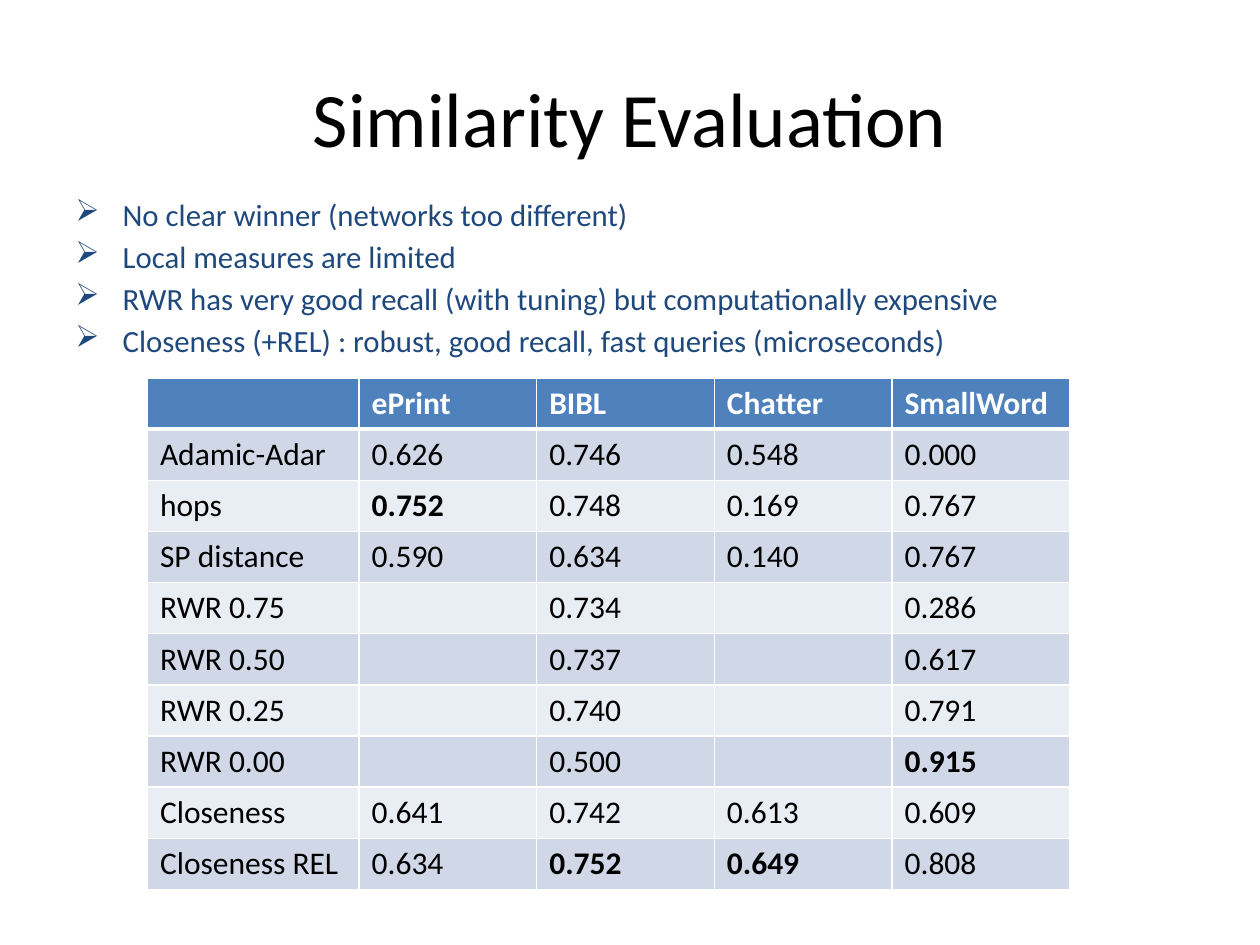
from dataclasses import dataclass

from lxml import etree
from pptx import Presentation
from pptx import util as u
from pptx.dml.color import RGBColor
from pptx.enum import text
from pptx.oxml.ns import qn


@dataclass(frozen=True)
class Theme:
    font: str = "Calibri"
    black: str = "000000"
    white: str = "FFFFFF"
    navy: str = "1F497D"
    header: str = "4F81BD"
    bands: tuple = ("D0D8E8", "E9EDF4")
    title_size: float = 44
    bullet_size: float = 17.6
    table_size: float = 18
    bullet: str = "➢"


class SlideBuilder:
    def __init__(self, slide, theme):
        self.slide = slide
        self.theme = theme

    def style(self, paragraph, size, color, bold=False):
        for run in paragraph.runs:
            font = run.font
            font.name = self.theme.font
            font.size = u.Pt(size)
            font.bold = bold
            font.color.rgb = RGBColor.from_string(color)

    def text_box(self, left, top, width, height, content, size, color):
        shape = self.slide.shapes.add_textbox(
            u.Inches(left), u.Inches(top), u.Inches(width), u.Inches(height))
        frame = shape.text_frame
        frame.word_wrap = True
        frame.text = content
        for paragraph in frame.paragraphs:
            self.style(paragraph, size, color)
        return frame

    def title(self, left, top, width, height, content):
        frame = self.text_box(left, top, width, height, content,
                              self.theme.title_size, self.theme.black)
        frame.vertical_anchor = text.MSO_ANCHOR.MIDDLE
        frame.paragraphs[0].alignment = text.PP_ALIGN.CENTER

    def bullets(self, left, top, width, height, items):
        frame = self.text_box(left, top, width, height, "\n".join(items),
                              self.theme.bullet_size, self.theme.navy)
        indent = u.Inches(0.375)
        for paragraph in frame.paragraphs:
            paragraph.space_before = u.Pt(3)
            properties = paragraph._p.get_or_add_pPr()
            properties.set("marL", str(indent))
            properties.set("indent", str(-indent))
            etree.SubElement(properties, qn("a:buChar"), char=self.theme.bullet)

    def borders(self, cell, bottom_width):
        properties = cell._tc.get_or_add_tcPr()
        widths = {"a:lnL": 1, "a:lnR": 1, "a:lnT": 1, "a:lnB": bottom_width}
        for tag, width in widths.items():
            line = etree.SubElement(properties, qn(tag), w=str(u.Pt(width)))
            fill = etree.SubElement(line, qn("a:solidFill"))
            etree.SubElement(fill, qn("a:srgbClr"), val=self.theme.white)

    def table(self, left, top, column_widths, row_height, rows, winners):
        theme = self.theme
        table = self.slide.shapes.add_table(
            len(rows), len(column_widths), u.Inches(left), u.Inches(top),
            u.Inches(sum(column_widths)), u.Inches(row_height * len(rows))).table
        for column, width in zip(table.columns, column_widths):
            column.width = u.Inches(width)
        for row_index, values in enumerate(rows):
            table.rows[row_index].height = u.Inches(row_height)
            is_header = row_index == 0
            fill = theme.header if is_header else theme.bands[(row_index - 1) % 2]
            color = theme.white if is_header else theme.black
            for column_index, value in enumerate(values):
                cell = table.cell(row_index, column_index)
                cell.text = value
                bold = is_header or (values[0], rows[0][column_index]) in winners
                self.style(cell.text_frame.paragraphs[0],
                           theme.table_size, color, bold)
                self.borders(cell, 3 if is_header else 1)
                cell.fill.solid()
                cell.fill.fore_color.rgb = RGBColor.from_string(fill)


BULLETS = [
    "No clear winner (networks too different)",
    "Local measures are limited",
    "RWR has very good recall (with tuning) but computationally expensive",
    "Closeness (+REL) : robust, good recall, fast queries (microseconds)",
]

RECALL = [
    ("", "ePrint", "BIBL", "Chatter", "SmallWord"),
    ("Adamic-Adar", "0.626", "0.746", "0.548", "0.000"),
    ("hops", "0.752", "0.748", "0.169", "0.767"),
    ("SP distance", "0.590", "0.634", "0.140", "0.767"),
    ("RWR 0.75", "", "0.734", "", "0.286"),
    ("RWR 0.50", "", "0.737", "", "0.617"),
    ("RWR 0.25", "", "0.740", "", "0.791"),
    ("RWR 0.00", "", "0.500", "", "0.915"),
    ("Closeness", "0.641", "0.742", "0.613", "0.609"),
    ("Closeness REL", "0.634", "0.752", "0.649", "0.808"),
]

WINNERS = {
    ("hops", "ePrint"),
    ("RWR 0.00", "SmallWord"),
    ("Closeness REL", "BIBL"),
    ("Closeness REL", "Chatter"),
}


def main():
    presentation = Presentation()
    presentation.slide_width = u.Inches(10)
    presentation.slide_height = u.Inches(7.5)
    slide = presentation.slides.add_slide(presentation.slide_layouts[6])
    builder = SlideBuilder(slide, Theme())
    builder.title(0.5, 0.3, 9, 1.25, "Similarity Evaluation")
    builder.bullets(0.5, 1.5, 9, 1.25, BULLETS)
    builder.table(1.17, 3, [1.68] + [1.41] * 4, 0.406, RECALL, WINNERS)
    presentation.save("out.pptx")


if __name__ == "__main__":
    main()
